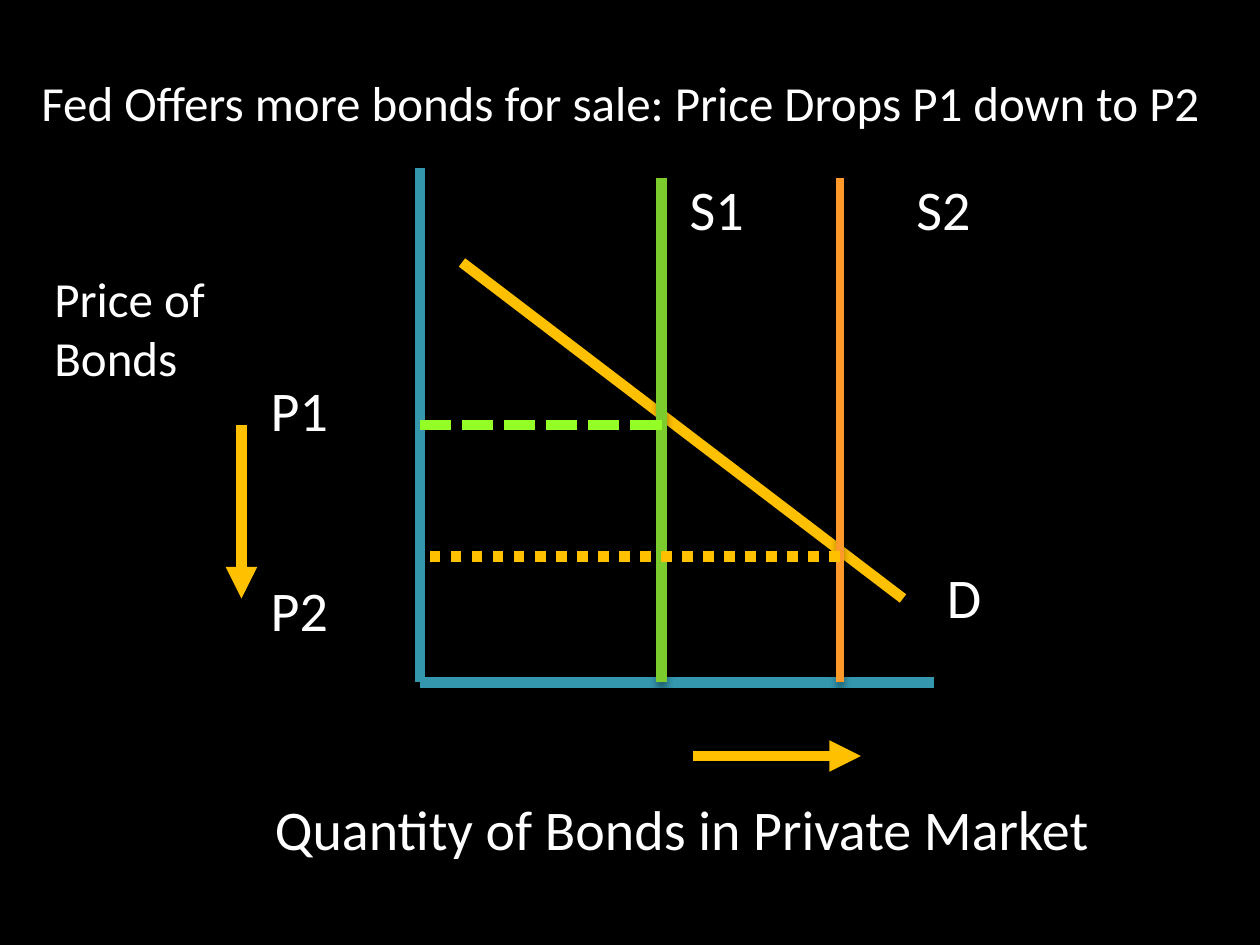
import pptx
import pptx.dml.color
import pptx.enum.dml
import pptx.enum.shapes
import pptx.enum.text
import pptx.oxml.ns
import pptx.util
from lxml import etree

RGBColor = pptx.dml.color.RGBColor
BLACK = RGBColor(0x00, 0x00, 0x00)
WHITE = RGBColor(0xFF, 0xFF, 0xFF)
TEAL = RGBColor(0x34, 0x97, 0xAE)
GOLD = RGBColor(0xFF, 0xC0, 0x00)
ORANGE = RGBColor(0xFF, 0x99, 0x29)
GREEN = RGBColor(0x7D, 0xCC, 0x2E)
LIME = RGBColor(0x93, 0xFF, 0x27)

DASH = pptx.enum.dml.MSO_LINE.SQUARE_DOT
DOT = pptx.enum.dml.MSO_LINE.ROUND_DOT
COLUMNS, ROWS = 120, 90
TITLE_ONLY = 5
qn = pptx.oxml.ns.qn


class MarketSlide:
    font_name = "Calibri"
    line_width = 6

    def __init__(self, deck):
        self.column = deck.slide_width / COLUMNS
        self.row = deck.slide_height / ROWS
        self.page = deck.slides.add_slide(deck.slide_layouts[TITLE_ONLY])
        self.page.background.fill.solid()
        self.page.background.fill.fore_color.rgb = BLACK

    def place(self, column, row):
        return round(column * self.column), round(row * self.row)

    def set_text(self, box, paragraphs, size, gap=0, tab=None):
        frame = box.text_frame
        frame.word_wrap = True
        frame.auto_size = pptx.enum.text.MSO_AUTO_SIZE.SHAPE_TO_FIT_TEXT
        frame.vertical_anchor = pptx.enum.text.MSO_ANCHOR.TOP
        frame.text = "\n".join(paragraphs)
        for index, para in enumerate(frame.paragraphs):
            para.alignment = pptx.enum.text.PP_ALIGN.LEFT
            para.space_before = pptx.util.Pt(gap if index else 0)
            if tab:
                stops = etree.SubElement(para._p.get_or_add_pPr(), qn("a:tabLst"))
                etree.SubElement(stops, qn("a:tab"), pos=str(round(tab * self.column)), algn="l")
            para.font.name = self.font_name
            para.font.size = pptx.util.Pt(size)
            para.font.color.rgb = WHITE

    def title(self, text, left, top, width, height):
        box = self.page.shapes.title
        box.left, box.top = self.place(left, top)
        box.width, box.height = self.place(width, height)
        self.set_text(box, [text], 28)

    def label(self, paragraphs, left, top, width, height, size=32, gap=0, tab=None):
        box = self.page.shapes.add_textbox(*self.place(left, top), *self.place(width, height))
        self.set_text(box, paragraphs, size, gap, tab)

    def line(self, start, end, color, width=line_width, dash=None, arrow=False, shadow=False):
        connector = self.page.shapes.add_connector(
            pptx.enum.shapes.MSO_CONNECTOR.STRAIGHT, *self.place(*start), *self.place(*end))
        connector.line.color.rgb = color
        connector.line.width = pptx.util.Pt(width)
        if dash:
            connector.line.dash_style = dash
        properties = connector._element.spPr
        if arrow:
            etree.SubElement(properties.find(qn("a:ln")), qn("a:tailEnd"), type="triangle")
        effects = etree.SubElement(properties, qn("a:effectLst"))
        if shadow:
            outer = etree.SubElement(
                effects, qn("a:outerShdw"), blurRad=str(int(pptx.util.Pt(4))),
                dist=str(int(pptx.util.Pt(3))), dir="5400000", rotWithShape="0")
            shade = etree.SubElement(outer, qn("a:srgbClr"), val=str(BLACK))
            etree.SubElement(shade, qn("a:alpha"), val="35000")


def main():
    deck = pptx.Presentation()
    deck.slide_width = pptx.util.Inches(10)
    deck.slide_height = pptx.util.Inches(7.5)
    slide = MarketSlide(deck)

    axis, floor = 40, 65
    supply_top, supply_before, supply_after = 17, 63, 80
    price_before, price_after = 40.5, 53

    slide.title("Fed Offers more bonds for sale: Price Drops P1 down to P2", 2.75, 6.35, 114.5, 6.85)

    slide.line((axis, 16), (axis, floor), TEAL)
    slide.line((axis, floor), (89, floor), TEAL)
    slide.line((44, 25), (86, 57), GOLD)
    slide.line((supply_after, supply_top), (supply_after, floor), ORANGE, width=4.33, shadow=True)
    slide.line((supply_before, supply_top), (supply_before, floor), GREEN, shadow=True)
    slide.line((supply_before, price_before), (axis, price_before), LIME, dash=DASH)
    slide.line((supply_after, price_after), (axis, price_after), GOLD, dash=DOT)

    slide.label(["S1\tS2"], 64.5, 16, 29.5, 14.2, tab=21.6)
    slide.label(["D"], 89, 53, 7, 7.7)
    slide.label(["P1", "P2"], 24.6, 35.2, 10.2, 27.1, gap=76)
    slide.line((23, price_before), (23, 57), GOLD, arrow=True)
    slide.line((66, 72), (82, 72), GOLD, arrow=True)
    slide.label(["Price of Bonds"], 4, 25, 25, 12.5, size=28)
    slide.label(["Quantity of Bonds in Private Market"], 25, 75.1, 82, 7.7)

    deck.save("out.pptx")


if __name__ == "__main__":
    main()
